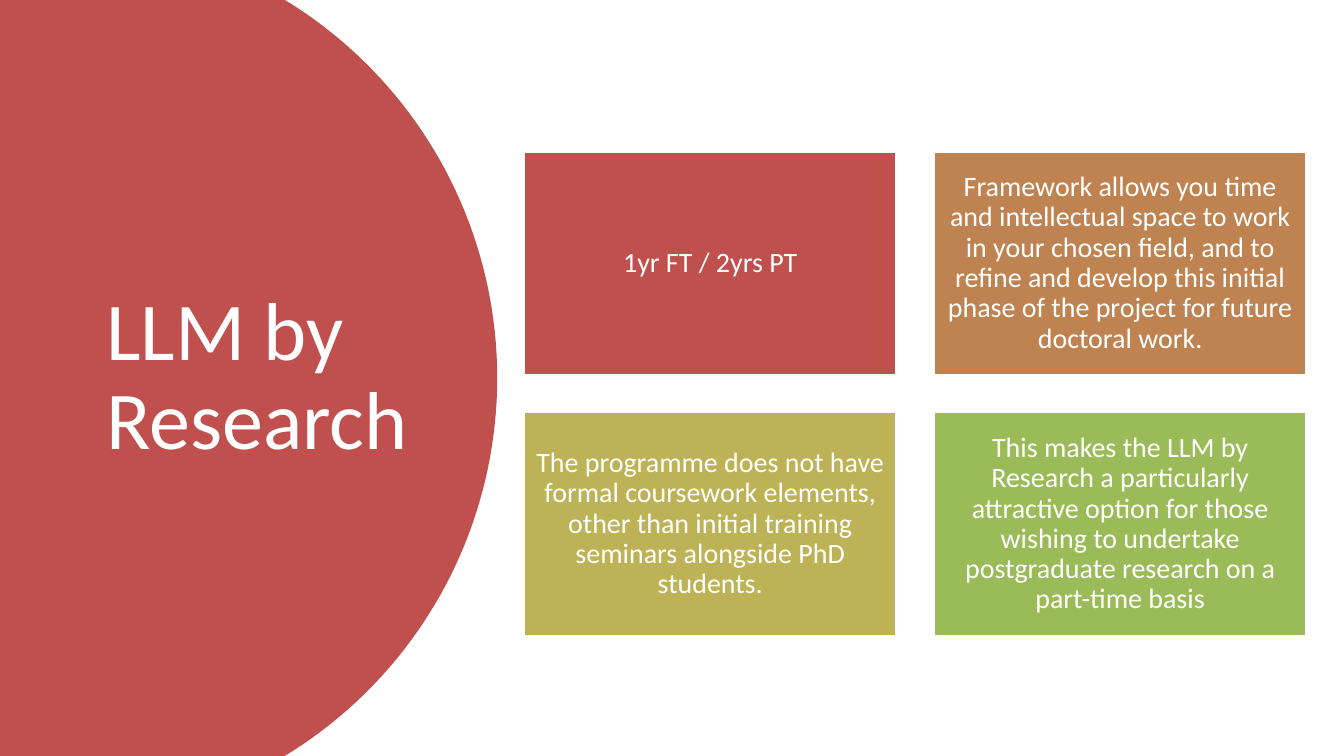
from math import asin, cos, hypot, sin

from pptx import Presentation
from pptx.dml.color import RGBColor
from pptx.enum.shapes import MSO_SHAPE
from pptx.enum.text import MSO_ANCHOR, MSO_AUTO_SIZE, PP_ALIGN
from pptx.util import Inches, Pt

WHITE = RGBColor(0xFF, 0xFF, 0xFF)
RED = RGBColor(0xC0, 0x50, 0x4D)
ORANGE = RGBColor(0xBE, 0x83, 0x51)
OLIVE = RGBColor(0xBD, 0xB2, 0x55)
GREEN = RGBColor(0x9B, 0xBB, 0x59)
FONT = "Calibri"
SLIDE_WIDTH = 10
SLIDE_HEIGHT = SLIDE_WIDTH * 9 / 16
ARC_STEPS = 80

CARDS = [
    ("1yr FT / 2yrs PT", RED),
    ("Framework allows you time and intellectual space to work in your chosen field, "
     "and to refine and develop this initial phase of the project for future doctoral work.",
     ORANGE),
    ("The programme does not have formal coursework elements, other than initial "
     "training seminars alongside PhD students.", OLIVE),
    ("This makes the LLM by Research a particularly attractive option for those wishing "
     "to undertake postgraduate research on a part-time basis", GREEN),
]


def write_text(shape, text, size, alignment):
    """Set one vertically centred white paragraph in a shape."""
    frame = shape.text_frame
    frame.word_wrap = True
    frame.auto_size = MSO_AUTO_SIZE.NONE
    frame.vertical_anchor = MSO_ANCHOR.MIDDLE
    paragraph = frame.paragraphs[0]
    paragraph.alignment = alignment
    paragraph.line_spacing = 0.9
    run = paragraph.add_run()
    run.text = text
    run.font.name = FONT
    run.font.size = Pt(size)
    run.font.color.rgb = WHITE


def add_title_panel(slide, left, top, width, height, straight_width):
    """Draw the panel with a circular right edge and put the title on it."""
    bulge, half = width - straight_width, height / 2
    radius = hypot(bulge, half) ** 2 / (2 * bulge)
    limit = asin(half / radius)
    center_x, center_y = left + width - radius, top + half
    angles = [limit * (2 * step / ARC_STEPS - 1) for step in range(ARC_STEPS + 1)]
    arc = [(Inches(center_x + radius * cos(angle)), Inches(center_y + radius * sin(angle)))
           for angle in angles]
    builder = slide.shapes.build_freeform(Inches(left), Inches(top))
    builder.add_line_segments(arc + [(Inches(left), Inches(top + height))], close=True)
    panel = builder.convert_to_shape()
    panel.shadow.inherit = False
    panel.fill.solid()
    panel.fill.fore_color.rgb = RED
    panel.line.fill.background()

    title = slide.shapes.title
    title.left, title.top = Inches(left + 0.69), Inches(top + 0.53)
    title.width, title.height = Inches(2.64), Inches(4.57)
    write_text(title, "LLM by Research", 44, PP_ALIGN.LEFT)
    panel.element.addnext(title.element)


def add_card(slide, left, top, width, height, text, color):
    """Add one filled card with centred text."""
    card = slide.shapes.add_shape(
        MSO_SHAPE.RECTANGLE, Inches(left), Inches(top), Inches(width), Inches(height))
    card.shadow.inherit = False
    card.fill.solid()
    card.fill.fore_color.rgb = color
    card.line.color.rgb = WHITE
    card.line.width = Pt(1)
    frame = card.text_frame
    frame.margin_left = frame.margin_right = Inches(0.06)
    frame.margin_top = frame.margin_bottom = Inches(0.06)
    write_text(card, text, 15, PP_ALIGN.CENTER)


def add_card_grid(slide, left, top, width, height, columns=2, gap=0.28):
    """Lay the cards out in equal cells inside the given box."""
    rows = len(CARDS) // columns
    card_width = (width - gap * (columns - 1)) / columns
    card_height = (height - gap * (rows - 1)) / rows
    for index, (text, color) in enumerate(CARDS):
        row, column = divmod(index, columns)
        add_card(slide, left + column * (card_width + gap), top + row * (card_height + gap),
                 card_width, card_height, text, color)


def main():
    """Build and save the presentation."""
    presentation = Presentation()
    presentation.slide_width = Inches(SLIDE_WIDTH)
    presentation.slide_height = Inches(SLIDE_HEIGHT)
    slide = presentation.slides.add_slide(presentation.slide_layouts.get_by_name("Title Only"))
    add_title_panel(slide, 0, 0, 3.7, SLIDE_HEIGHT, 2.12)
    add_card_grid(slide, 3.9, 1.13, 5.82, 3.6)
    presentation.save("out.pptx")


if __name__ == "__main__":
    main()
